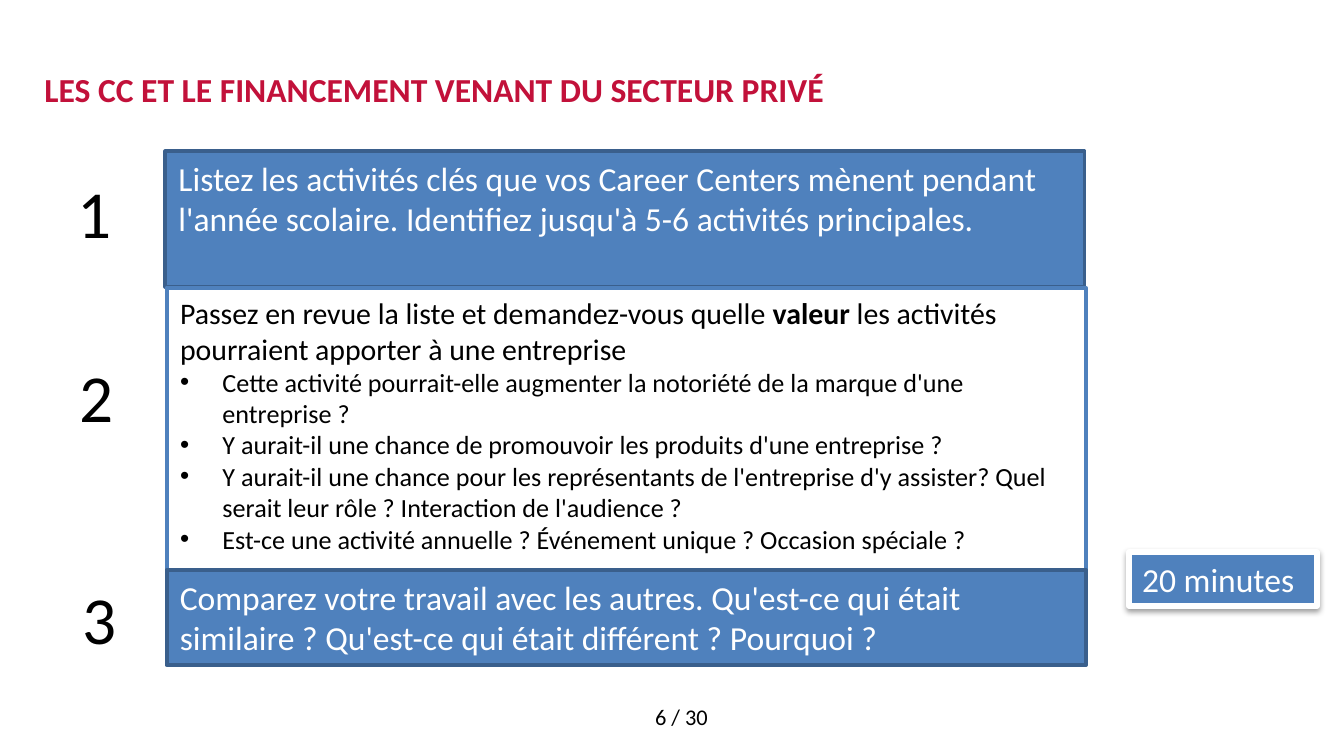
import pptx
import pptx.util
import pptx.dml.color
import pptx.enum.shapes
import pptx.enum.text
import pptx.oxml
import pptx.oxml.ns
from lxml import etree

PX = 4572  # EMU in one px, 200 px to the inch
HUES = {
    "white": "FFFFFF",
    "black": "000000",
    "red": "C2113A",
    "blue": "4F81BD",
    "navy": "3A5F8C",
}
ALIGN = pptx.enum.text.PP_ALIGN
ANCHOR = pptx.enum.text.MSO_ANCHOR

TITLE = "LES CC ET LE FINANCEMENT VENANT DU SECTEUR PRIVÉ"
LEAD = [
    ("Passez en revue la liste et demandez-vous quelle ", False),
    ("valeur", True),
    (" les activités pourraient apporter à une entreprise", False),
]
ITEMS = [
    "Cette activité pourrait-elle augmenter la notoriété de la marque d'une entreprise ?",
    "Y aurait-il une chance de promouvoir les produits d'une entreprise ?",
    "Y aurait-il une chance pour les représentants de l'entreprise d'y assister? "
    "Quel serait leur rôle ? Interaction de l'audience ?",
    "Est-ce une activité annuelle ? Événement unique ? Occasion spéciale ?",
]
# text, place
STEPS = [
    ("Listez les activités clés que vos Career Centers mènent pendant l'année "
     "scolaire. Identifiez jusqu'à 5-6 activités principales.", (246, 225, 1368, 202)),
    ("Comparez votre travail avec les autres. Qu'est-ce qui était similaire ? "
     "Qu'est-ce qui était différent ? Pourquoi ?", (248, 848, 1368, 142)),
]
MARKS = [(96, 245, 150, 142), (98, 519, 110, 142), (103, 849, 92, 142)]


def hue(name):
    return pptx.dml.color.RGBColor.from_string(HUES[name])


def scale(place):
    return [n * PX for n in place]


def move(shape, place):
    shape.left, shape.top, shape.width, shape.height = scale(place)


def paint(shape, fill, line=None, width=2):
    shape.fill.solid()
    shape.fill.fore_color.rgb = hue(fill)
    if line:
        shape.line.color.rgb = hue(line)
        shape.line.width = pptx.util.Pt(width)


def style(para, size, color, align=ALIGN.LEFT, bold=None):
    para.alignment = align
    font = para.font
    font.name = "Calibri"
    font.size = pptx.util.Pt(size)
    font.color.rgb = hue(color)
    font.bold = bold


def setup(frame, anchor=ANCHOR.TOP):
    frame.word_wrap = True
    frame.auto_size = pptx.enum.text.MSO_AUTO_SIZE.NONE
    frame.vertical_anchor = anchor


def add_box(slide, text, place, line, width=2):
    box = slide.shapes.add_shape(
        pptx.enum.shapes.MSO_SHAPE.RECTANGLE, *scale(place))
    box.shadow.inherit = False
    paint(box, "blue", line, width)
    setup(box.text_frame)
    box.text_frame.text = text
    style(box.text_frame.paragraphs[0], 18, "white")
    return box


def add_label(slide, text, place, size, align=ALIGN.LEFT):
    label = slide.shapes.add_textbox(*scale(place))
    setup(label.text_frame)
    label.text_frame.text = text
    style(label.text_frame.paragraphs[0], size, "black", align)


def add_shadow(shape):
    effects = shape.element.spPr.find(pptx.oxml.ns.qn("a:effectLst"))
    effects.append(pptx.oxml.parse_xml(
        f'<a:outerShdw {pptx.oxml.ns.nsdecls("a")} blurRad="40000" dist="20000" '
        f'dir="5400000" rotWithShape="0"><a:srgbClr val="{HUES["black"]}">'
        '<a:alpha val="38000"/></a:srgbClr></a:outerShdw>'))


def set_bullet(para, char=None):
    """Give the paragraph a hanging bullet, or none at all."""
    props = para._p.get_or_add_pPr()
    indent = 63 * PX if char else 0
    props.set("marL", str(indent))
    props.set("indent", str(-indent))
    qn = pptx.oxml.ns.qn
    if char:
        color = etree.SubElement(props, qn("a:buClr"))
        etree.SubElement(color, qn("a:srgbClr"), val=HUES["black"])
        etree.SubElement(props, qn("a:buFont"), typeface="Arial")
        etree.SubElement(props, qn("a:buChar"), char=char)
    else:
        etree.SubElement(props, qn("a:buNone"))
    para.space_before = pptx.util.Pt(0)


def fill_title(title):
    move(title, (66, 59, 1866, 152))
    paint(title, "white")
    frame = title.text_frame
    setup(frame, ANCHOR.MIDDLE)
    frame.margin_left = frame.margin_right = 0
    frame.margin_top = frame.margin_bottom = 0
    frame.text = TITLE
    para = frame.paragraphs[0]
    para.line_spacing = pptx.util.Pt(20)
    style(para, 18, "red", ALIGN.JUSTIFY, True)


def fill_body(body):
    move(body, (248, 428, 1368, 420))
    paint(body, "white", "blue")
    frame = body.text_frame
    setup(frame)
    lead = frame.paragraphs[0]
    set_bullet(lead)
    style(lead, 16, "black")
    for text, bold in LEAD:
        run = lead.add_run()
        run.text = text
        run.font.bold = bold
    for text in ITEMS:
        para = frame.add_paragraph()
        para.text = text
        set_bullet(para, "•")
        style(para, 14, "black")


def main():
    deck = pptx.Presentation()
    deck.slide_width, deck.slide_height = scale((2000, 1125))
    slide = deck.slides.add_slide(deck.slide_layouts[1])
    fill_title(slide.shapes.title)

    # Three steps, the middle one over the first and under the last
    first, last = STEPS
    add_box(slide, *first, "navy")
    body = slide.placeholders[1]
    fill_body(body)
    slide.shapes.element.append(body.element)
    add_box(slide, *last, "navy")

    # Step numbers
    for number, place in enumerate(MARKS, 1):
        add_label(slide, str(number), place, 36)

    # Time allowed and page number
    add_shadow(add_box(slide, "20 minutes", (1680, 822, 280, 80), "white", 3))
    add_label(slide, "6 / 30", (875, 1037, 278, 62), 12, ALIGN.CENTER)

    deck.save("out.pptx")


if __name__ == "__main__":
    main()
